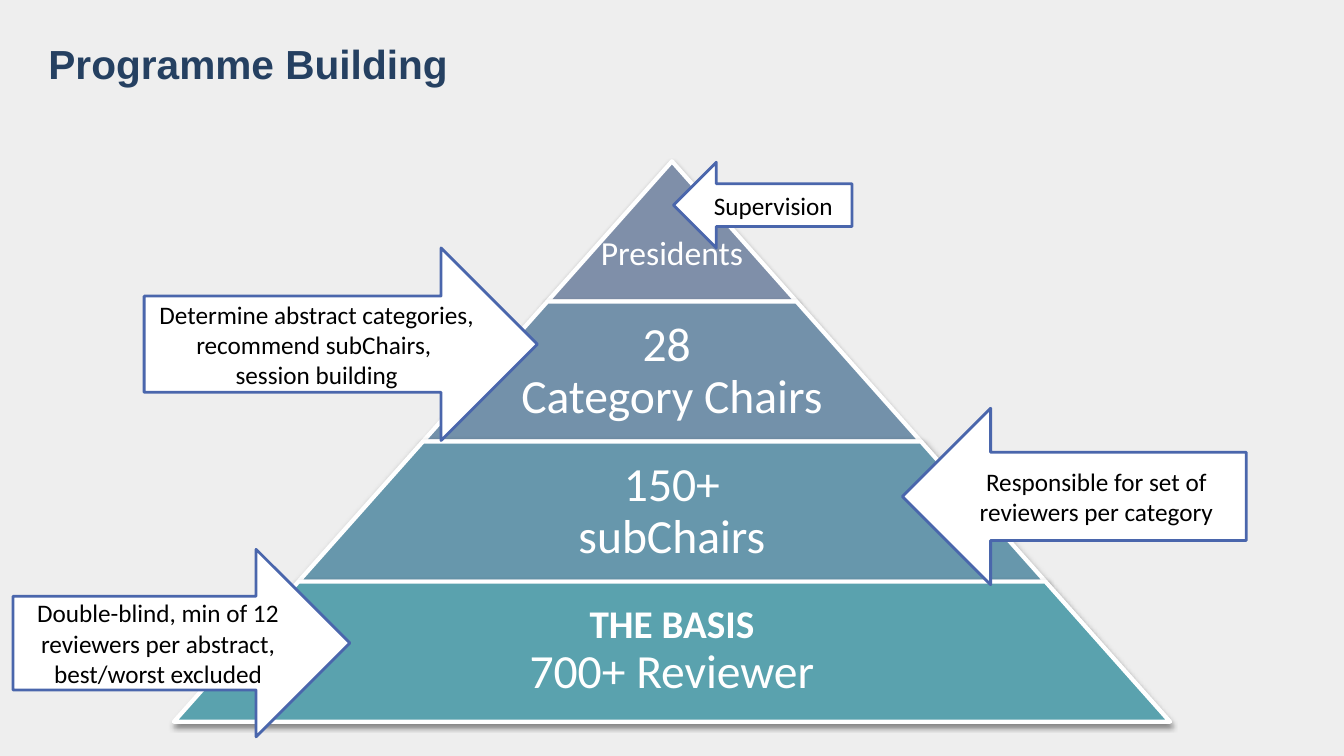
from lxml import etree
from pptx import Presentation
from pptx.dml.color import RGBColor
from pptx.enum.shapes import MSO_SHAPE
from pptx.enum.text import MSO_ANCHOR, MSO_AUTO_SIZE, PP_ALIGN
from pptx.oxml.ns import qn
from pptx.util import Inches, Pt

TRAPEZOID = MSO_SHAPE.TRAPEZOID
LEFT_ARROW = MSO_SHAPE.LEFT_ARROW
RIGHT_ARROW = MSO_SHAPE.RIGHT_ARROW
MIDDLE = MSO_ANCHOR.MIDDLE
BOTTOM = MSO_ANCHOR.BOTTOM
NO_FIT = MSO_AUTO_SIZE.NONE
LEFT = PP_ALIGN.LEFT
CENTER = PP_ALIGN.CENTER

TITLE = "Programme Building"
# fill, share of the tier width used by text, top inset, lines of (text, size, bold)
TIERS = [
    ("7F8FA9", 1, 0.51, [("Presidents", 24, False)]),
    ("7391AA", 0.65, 0.05, [("28 ", 34, False), ("Category Chairs", 34, False)]),
    ("6797AC", 0.65, 0.05, [("150+", 34, False), ("subChairs", 34, False)]),
    ("5AA2AE", 0.65, 0.04, [("THE BASIS", 28, True), ("700+ Reviewer", 34, False)]),
]
ARROWS = [
    (LEFT_ARROW, (6.68, 1.61, 1.77, 0.85), ["Supervision"]),
    (RIGHT_ARROW, (1.43, 2.46, 3.9, 1.91),
     ["Determine abstract categories, recommend subChairs, ", "session building"]),
    (LEFT_ARROW, (8.95, 4.05, 3.41, 1.75),
     ["Responsible for set of reviewers per category"]),
    (RIGHT_ARROW, (0.13, 5.45, 3.34, 1.86),
     ["Double-blind, min of 12 reviewers per abstract, best/worst excluded"]),
]
PYRAMID_CENTER = 6.665
PYRAMID_TOP = 1.6
TIER_HEIGHT = 1.39
TIER_STEP = 2.47


def color(value):
    return RGBColor.from_string(value)


def place(shape, left, top, width, height):
    shape.left, shape.top = Inches(left), Inches(top)
    shape.width, shape.height = Inches(width), Inches(height)


def write(frame, lines, font_color, font_name="Calibri", align=CENTER, anchor=MIDDLE):
    frame.word_wrap = True
    frame.auto_size = NO_FIT
    frame.vertical_anchor = anchor
    para = frame.paragraphs[0]
    para.alignment = align
    for index, (text, size, bold) in enumerate(lines):
        if index:
            para.add_line_break()
        span = para.add_run()
        span.text = text
        span.font.name = font_name
        span.font.size = Pt(size)
        span.font.bold = bold
        span.font.color.rgb = color(font_color)
    return para


def add_outlined(page, kind, bounds, fill, line, line_width):
    shape = page.shapes.add_shape(kind, *map(Inches, bounds))
    shape.shadow.inherit = False
    shape.fill.solid()
    shape.fill.fore_color.rgb = color(fill)
    shape.line.color.rgb = color(line)
    shape.line.width = Pt(line_width)
    return shape


def add_shadow(shape):
    effects = shape._element.spPr.find(qn("a:effectLst"))
    outer = etree.SubElement(effects, qn("a:outerShdw"), blurRad=str(Pt(4)),
                             dist=str(Pt(2)), dir="5400000", rotWithShape="0")
    tint = etree.SubElement(outer, qn("a:srgbClr"), val="000000")
    etree.SubElement(tint, qn("a:alpha"), val="43000")


def add_tier(page, index, fill, text_share, top_inset, lines):
    width = TIER_STEP * (index + 1)
    top = PYRAMID_TOP + TIER_HEIGHT * index
    bounds = (PYRAMID_CENTER - width / 2, top, width, TIER_HEIGHT)
    tier = add_outlined(page, TRAPEZOID, bounds, fill, "FFFFFF", 3)
    tier.adjustments[0] = TIER_STEP / 2 / TIER_HEIGHT
    add_shadow(tier)

    text_width = width * text_share
    text_bounds = (PYRAMID_CENTER - text_width / 2, top, text_width, TIER_HEIGHT)
    box = page.shapes.add_textbox(*map(Inches, text_bounds))
    frame = box.text_frame
    frame.margin_left = frame.margin_right = frame.margin_bottom = Inches(0.04)
    frame.margin_top = Inches(top_inset)
    write(frame, lines, "FFFFFF").line_spacing = 0.9


def main():
    deck = Presentation()
    deck.slide_width, deck.slide_height = Inches(13.33), Inches(7.5)
    page = deck.slides.add_slide(deck.slide_layouts[5])
    page.background.fill.solid()
    page.background.fill.fore_color.rgb = color("EEEEEE")

    title = page.shapes.title
    place(title, 0.38, 0.16, 12.6, 0.76)
    write(title.text_frame, [(TITLE, 29, True)], "254061", "Arial", LEFT, BOTTOM)

    for index, tier in enumerate(TIERS):
        add_tier(page, index, *tier)

    for kind, bounds, lines in ARROWS:
        arrow = add_outlined(page, kind, bounds, "FFFFFF", "4A66AC", 2)
        write(arrow.text_frame, [(text, 18, False) for text in lines], "000000")

    deck.save("out.pptx")


if __name__ == "__main__":
    main()
